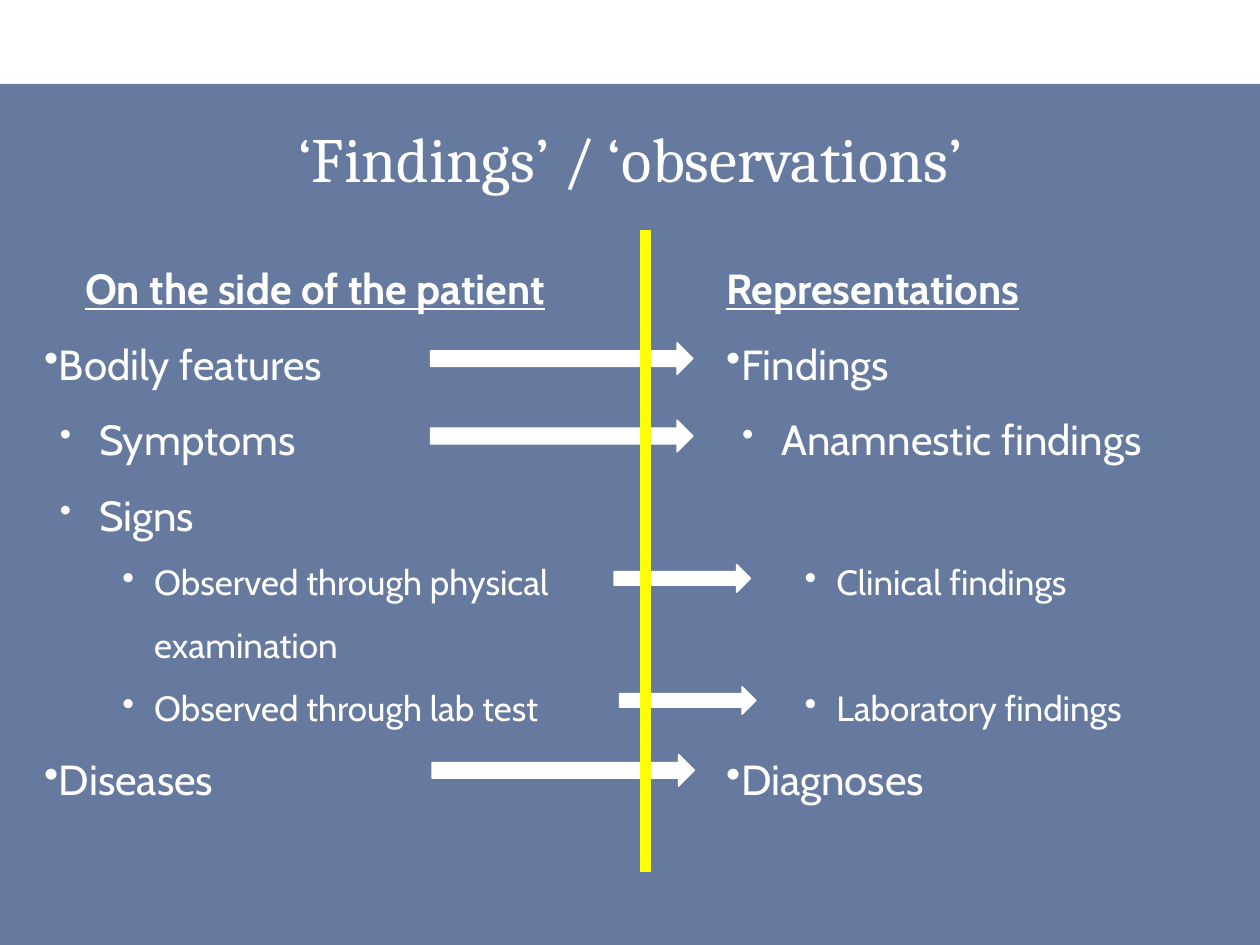
from lxml import etree
from pptx import Presentation
from pptx import util as u
from pptx.dml.color import RGBColor
from pptx.enum import shapes, text
from pptx.oxml.ns import qn

WHITE, NAVY, YELLOW = "FFFFFF", "002060", "FFFF00"
MARGINS = [(0, 0), (1.11, -0.79), (2.22, -0.64)]  # left margin, indent by level
SIZES = [24, 24, 20]
LINE_HEIGHT = 1.8  # height of a line per point of text size


def color(hex_string):
    return RGBColor.from_string(hex_string)


def add_filled(kind, left, top, width, height, fill):
    shape = slide.shapes.add_shape(kind, u.Cm(left), u.Cm(top), u.Cm(width), u.Cm(height))
    shape.shadow.inherit = False
    shape.fill.solid()
    shape.fill.fore_color.rgb = color(fill)
    shape.line.color.rgb = color(fill)
    shape.line.width = u.Pt(0.75)
    return shape


presentation = Presentation()
presentation.slide_width, presentation.slide_height = u.Cm(25.4), u.Cm(19.05)
slide = presentation.slides.add_slide(presentation.slide_layouts[6])

# Translucent panel
panel = add_filled(shapes.MSO_SHAPE.RECTANGLE, 0, 1.69, 25.4, 17.36, NAVY)
panel.line.fill.background()
panel_color = panel.fill._xPr.find(qn("a:solidFill"))[0]
etree.SubElement(panel_color, qn("a:alpha"), val="60000")

# Title
title = slide.shapes.add_textbox(u.Cm(0.64), u.Cm(2.12), u.Cm(24.13), u.Cm(2.12))
title.text_frame.word_wrap = True
title.text_frame.vertical_anchor = text.MSO_ANCHOR.MIDDLE
paragraph = title.text_frame.paragraphs[0]
paragraph.text = "‘Findings’ / ‘observations’"
paragraph.alignment = text.PP_ALIGN.CENTER
paragraph.font.name = "Cambria"
paragraph.font.size = u.Pt(36)
paragraph.font.color.rgb = color(WHITE)

# Two columns: left, width, heading, alignment, (level, wording, skipped line size)
columns = [
    (0.64, 11.43, "On the side of the patient", text.PP_ALIGN.CENTER, [
        (0, "Bodily features", 0),
        (1, "Symptoms", 0),
        (1, "Signs", 0),
        (2, "Observed through physical examination", 0),
        (2, "Observed through lab test", 0),
        (0, "Diseases", 0),
    ]),
    (14.39, 10.37, "Representations", text.PP_ALIGN.LEFT, [
        (0, "Findings", 0),
        (1, "Anamnestic findings", 0),
        (2, "Clinical findings", 24),
        (2, "Laboratory findings", 20),
        (0, "Diagnoses", 0),
    ]),
]
for left, width, heading, alignment, items in columns:
    box = slide.shapes.add_textbox(u.Cm(left), u.Cm(4.66), u.Cm(width), u.Cm(13.76))
    frame = box.text_frame
    frame.word_wrap = True
    for index, (level, wording, skipped) in enumerate([(0, heading, 0)] + items):
        is_heading = index == 0
        paragraph = frame.paragraphs[0] if is_heading else frame.add_paragraph()
        paragraph.text = wording
        paragraph.level = level
        paragraph.alignment = alignment if is_heading else text.PP_ALIGN.LEFT
        paragraph.line_spacing = 1.5
        paragraph.space_before = u.Pt(skipped * LINE_HEIGHT)
        if not is_heading:
            properties = paragraph._p.get_or_add_pPr()
            margin, indent = MARGINS[level]
            properties.set("marL", str(u.Cm(margin)))
            properties.set("indent", str(u.Cm(indent)))
            bullet_color = etree.SubElement(properties, qn("a:buClr"))
            etree.SubElement(bullet_color, qn("a:srgbClr"), val=WHITE)
            if level == 1:
                etree.SubElement(properties, qn("a:buSzPct"), val="80000")
            etree.SubElement(properties, qn("a:buChar"), char="•")
        paragraph.font.name = "Cabin"
        paragraph.font.size = u.Pt(SIZES[level])
        paragraph.font.color.rgb = color(WHITE)
        paragraph.font.bold = is_heading
        paragraph.font.underline = is_heading

# Arrows from patient side to representations
long_arrow, short_arrow = (5.29, 0.64), (2.75, 0.56)
for left, top, size in [
    (8.68, 6.91, long_arrow),
    (8.68, 8.47, long_arrow),
    (12.38, 11.38, short_arrow),
    (12.49, 13.84, short_arrow),
    (8.71, 15.21, long_arrow),
]:
    add_filled(shapes.MSO_SHAPE.RIGHT_ARROW, left, top, *size, WHITE)

# Dividing bar
add_filled(shapes.MSO_SHAPE.RECTANGLE, 12.91, 4.66, 0.21, 12.91, YELLOW)

presentation.save("out.pptx")
